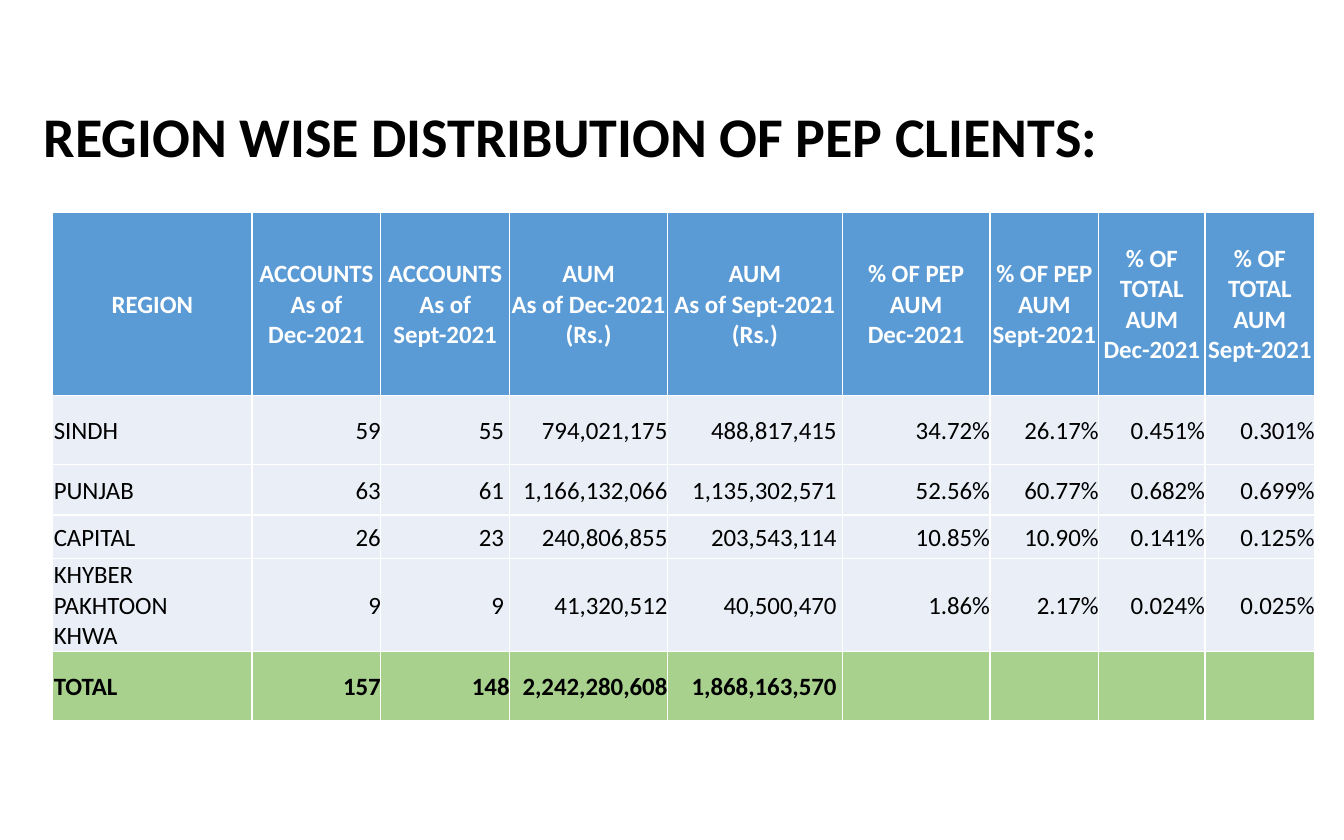
from lxml.etree import SubElement
from pptx import Presentation
from pptx.dml.color import RGBColor
from pptx.enum.text import MSO_ANCHOR, PP_ALIGN
from pptx.oxml.ns import qn
from pptx.util import Inches, Pt

TITLE = "REGION WISE DISTRIBUTION OF PEP CLIENTS:"
HEADERS = [
    ["REGION"],
    ["ACCOUNTS", "As of Dec-2021"],
    ["ACCOUNTS", "As of Sept-2021"],
    ["AUM", "As of Dec-2021", "(Rs.)"],
    ["AUM", "As of Sept-2021", "(Rs.)"],
    ["% OF PEP AUM", "Dec-2021"],
    ["% OF PEP AUM", "Sept-2021"],
    ["% OF TOTAL AUM", "Dec-2021"],
    ["% OF TOTAL AUM", "Sept-2021"],
]
REGIONS = [
    (["SINDH"], "59", "55", "794,021,175", "488,817,415", "34.72%", "26.17%", "0.451%", "0.301%"),
    (["PUNJAB"], "63", "61", "1,166,132,066", "1,135,302,571", "52.56%", "60.77%", "0.682%", "0.699%"),
    (["CAPITAL"], "26", "23", "240,806,855", "203,543,114", "10.85%", "10.90%", "0.141%", "0.125%"),
    (["KHYBER PAKHTOON", "KHWA"], "9", "9", "41,320,512", "40,500,470", "1.86%", "2.17%", "0.024%", "0.025%"),
]
TOTAL = (["TOTAL"], "157", "148", "2,242,280,608", "1,868,163,570", "", "", "", "")
COLUMN_WIDTHS = [1.78, 1.15, 1.15, 1.41, 1.56, 1.32, 0.97, 0.95, 0.98]
ROW_HEIGHTS = [1.63, 0.62, 0.45, 0.39, 0.82, 0.62]
INDENTED_COLUMNS = {2, 4}

THEME = {
    "font": "Calibri",
    "title_size": Pt(36),
    "table_size": Pt(16),
    "text": "000000",
    "header_text": "FFFFFF",
    "header": "5B9BD5",
    "body": "EAEFF7",
    "total": "A9D18E",
    "border": "FFFFFF",
}


def add_span(para, text, size, color, bold):
    span = para.add_run()
    span.text = text
    span.font.name = THEME["font"]
    span.font.size = size
    span.font.bold = bold
    span.font.color.rgb = RGBColor.from_string(color)


def set_borders(cell):
    properties = cell._tc.get_or_add_tcPr()
    for side in ("a:lnL", "a:lnR", "a:lnT", "a:lnB"):
        line = SubElement(properties, qn(side), w=str(Pt(1)))
        fill = SubElement(line, qn("a:solidFill"))
        SubElement(fill, qn("a:srgbClr"), val=THEME["border"])


def fill_cell(cell, lines, fill, color, bold, align, right_margin):
    set_borders(cell)
    cell.fill.solid()
    cell.fill.fore_color.rgb = RGBColor.from_string(fill)
    cell.vertical_anchor = MSO_ANCHOR.MIDDLE
    cell.margin_left = cell.margin_top = Inches(0.01)
    cell.margin_right = Inches(right_margin)
    cell.margin_bottom = 0
    frame = cell.text_frame
    for index, text in enumerate(lines):
        para = frame.add_paragraph() if index else frame.paragraphs[0]
        para.alignment = align
        if text:
            add_span(para, text, THEME["table_size"], color, bold)


def add_title(page):
    box = page.shapes.title
    box.left, box.top, box.width, box.height = map(Inches, (0.29, 0.52, 10.35, 1.45))
    box.text_frame.vertical_anchor = MSO_ANCHOR.MIDDLE
    para = box.text_frame.paragraphs[0]
    para.alignment = PP_ALIGN.LEFT
    para.line_spacing = 0.9
    add_span(para, TITLE, THEME["title_size"], THEME["text"], True)


def add_region_table(page):
    table = page.shapes.add_table(
        len(ROW_HEIGHTS), len(COLUMN_WIDTHS), Inches(0.47), Inches(1.9),
        Inches(sum(COLUMN_WIDTHS)), Inches(sum(ROW_HEIGHTS)),
    ).table
    for column, width in zip(table.columns, COLUMN_WIDTHS):
        column.width = Inches(width)
    for row, height in zip(table.rows, ROW_HEIGHTS):
        row.height = Inches(height)

    for column, lines in enumerate(HEADERS):
        fill_cell(table.cell(0, column), lines, THEME["header"], THEME["header_text"],
                  True, PP_ALIGN.CENTER, 0.01)

    for row, (name, *values) in enumerate([*REGIONS, TOTAL], start=1):
        is_total = row > len(REGIONS)
        fill = THEME["total"] if is_total else THEME["body"]
        fill_cell(table.cell(row, 0), name, fill, THEME["text"], is_total, PP_ALIGN.LEFT, 0.01)
        for column, value in enumerate(values, start=1):
            indented = column in INDENTED_COLUMNS and not (is_total and column == 2)
            fill_cell(table.cell(row, column), [value], fill, THEME["text"], is_total,
                      PP_ALIGN.RIGHT, 0.05 if indented else 0)


def main():
    deck = Presentation()
    deck.slide_width, deck.slide_height = Inches(12), Inches(7.5)
    page = deck.slides.add_slide(deck.slide_layouts[5])
    add_title(page)
    add_region_table(page)
    deck.save("out.pptx")


if __name__ == "__main__":
    main()
